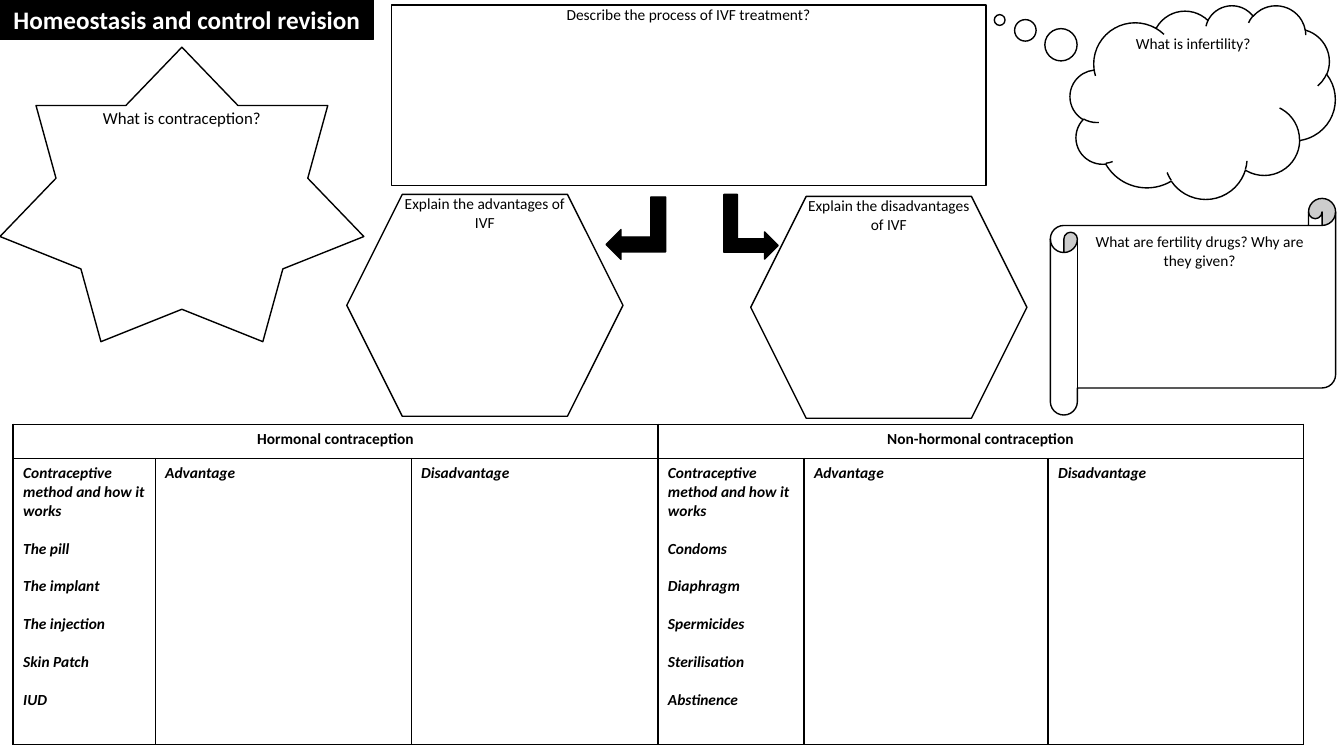
from lxml.etree import SubElement
from pptx import Presentation
from pptx.dml.color import RGBColor
from pptx.enum.shapes import MSO_SHAPE
from pptx.enum.text import MSO_ANCHOR, MSO_AUTO_SIZE, PP_ALIGN
from pptx.oxml.ns import qn
from pptx.util import Cm, Pt

BLACK = RGBColor(0, 0, 0)
WHITE = RGBColor(255, 255, 255)
FONT = "Calibri"

TITLE = "Homeostasis and control revision"

# preset, (left, top, width, height) in cm, text, size, top inset in cm
PROMPTS = [
    (MSO_SHAPE.STAR_7_POINT, (0, 1.19, 9.17, 7.42), "What is contraception?", 12, 0.05),
    (MSO_SHAPE.CLOUD_CALLOUT, (26.97, 0.13, 6.68, 4.88), "What is infertility?", 11, 0),
    (MSO_SHAPE.HORIZONTAL_SCROLL, (26.47, 5, 7.19, 5.46),
     "What are fertility drugs? Why are they given?", 11, 0.18),
    (MSO_SHAPE.RECTANGLE, (9.86, 0.13, 14.99, 4.55),
     "Describe the process of IVF treatment?", 11, 0),
]
CLOUD_TAIL = (-0.766, -0.423)

HEXAGONS = [(8.74, 4.9, "Explain the advantages of IVF"),
            (18.92, 4.95, "Explain the disadvantages of IVF")]
HEXAGON_SIZE = (6.96, 5.59)
LABEL_SIZE = (4.88, 1)

# box in cm, points left
ARROWS = [((18.11, 5.03, 1.63, 1.37), False), ((15.24, 5, 1.57, 1.5), True)]

METHOD_HEADING = "Contraceptive method and how it works"
CONTRACEPTION = [
    ("Hormonal contraception",
     ["The pill", "The implant", "The injection", "Skin Patch", "IUD"]),
    ("Non-hormonal contraception",
     ["Condoms", "Diaphragm", "Spermicides", "Sterilisation", "Abstinence"]),
]
TABLE_CORNER = (0.33, 10.69)
COLUMN_WIDTHS = [3.58, 6.45, 6.22, 3.68, 6.15, 6.43]
ROW_HEIGHTS = [0.86, 7.21]


def lengths(values):
    return [Cm(value) for value in values]


def paint(shape, color):
    shape.fill.solid()
    shape.fill.fore_color.rgb = color
    shape.line.color.rgb = BLACK
    shape.line.width = Pt(1)


def add_outline(slide, preset, box, color=WHITE):
    shape = slide.shapes.add_shape(preset, *lengths(box))
    shape.shadow.inherit = False
    paint(shape, color)
    return shape


def style(paragraph, size, color=BLACK, bold=False, italic=False, align=PP_ALIGN.CENTER):
    paragraph.alignment = align
    font = paragraph.font
    font.name, font.size, font.bold, font.italic = FONT, Pt(size), bold, italic
    font.color.rgb = color


def write_prompt(shape, text, size, top_inset):
    frame = shape.text_frame
    frame.word_wrap = True
    frame.vertical_anchor = MSO_ANCHOR.TOP
    frame.margin_top = Cm(top_inset)
    frame.margin_bottom = 0
    frame.text = text
    style(frame.paragraphs[0], size)


def write_cell(cell, lines, **look):
    cell.text = "\n".join(lines)
    for index, paragraph in enumerate(cell.text_frame.paragraphs):
        style(paragraph, 11, bold=True, **look)
        if index:
            paragraph.space_before = Pt(13.4)


def format_cell(cell):
    """White fill with a black border on all four sides."""
    properties = cell._tc.get_or_add_tcPr()
    for side in ("lnL", "lnR", "lnT", "lnB"):
        line = SubElement(properties, qn(f"a:{side}"), w=str(Pt(1)))
        SubElement(SubElement(line, qn("a:solidFill")), qn("a:srgbClr"), val=str(BLACK))
    cell.fill.solid()
    cell.fill.fore_color.rgb = WHITE


def add_title(slide):
    title = slide.shapes.title
    title.left, title.top, title.width, title.height = lengths((0, 0, 9.42, 0.99))
    paint(title, BLACK)
    frame = title.text_frame
    frame.text = TITLE
    frame.auto_size = MSO_AUTO_SIZE.NONE
    frame.vertical_anchor = MSO_ANCHOR.MIDDLE
    style(frame.paragraphs[0], 18, WHITE, bold=True)


def add_contraception_table(slide):
    size = (sum(COLUMN_WIDTHS), sum(ROW_HEIGHTS))
    table = slide.shapes.add_table(2, 6, *lengths(TABLE_CORNER + size)).table
    for column, width in zip(table.columns, COLUMN_WIDTHS):
        column.width = Cm(width)
    for row, height in zip(table.rows, ROW_HEIGHTS):
        row.height = Cm(height)
    for cell in table.iter_cells():
        format_cell(cell)
    for group, (heading, methods) in enumerate(CONTRACEPTION):
        first = group * 3
        table.cell(0, first).merge(table.cell(0, first + 2))
        write_cell(table.cell(0, first), [heading])
        columns = [[METHOD_HEADING] + methods, ["Advantage"], ["Disadvantage"]]
        for offset, lines in enumerate(columns):
            write_cell(table.cell(1, first + offset), lines, italic=True, align=PP_ALIGN.LEFT)


def main():
    presentation = Presentation()
    presentation.slide_width, presentation.slide_height = Cm(33.87), Cm(19.05)
    slide = presentation.slides.add_slide(presentation.slide_layouts[5])
    add_title(slide)
    add_contraception_table(slide)

    for preset, box, text, size, top_inset in PROMPTS:
        shape = add_outline(slide, preset, box)
        if preset == MSO_SHAPE.CLOUD_CALLOUT:
            shape.adjustments[0], shape.adjustments[1] = CLOUD_TAIL
        write_prompt(shape, text, size, top_inset)

    for left, top, text in HEXAGONS:
        add_outline(slide, MSO_SHAPE.HEXAGON, (left, top) + HEXAGON_SIZE)
        label_left = left + (HEXAGON_SIZE[0] - LABEL_SIZE[0]) / 2
        label = slide.shapes.add_textbox(*lengths((label_left, top) + LABEL_SIZE))
        write_prompt(label, text, 11, 0)

    for box, points_left in ARROWS:
        arrow = add_outline(slide, MSO_SHAPE.BENT_UP_ARROW, box, BLACK)
        arrow.rotation = 90
        if points_left:
            arrow._element.spPr.xfrm.set("flipV", "1")

    presentation.save("out.pptx")


if __name__ == "__main__":
    main()
